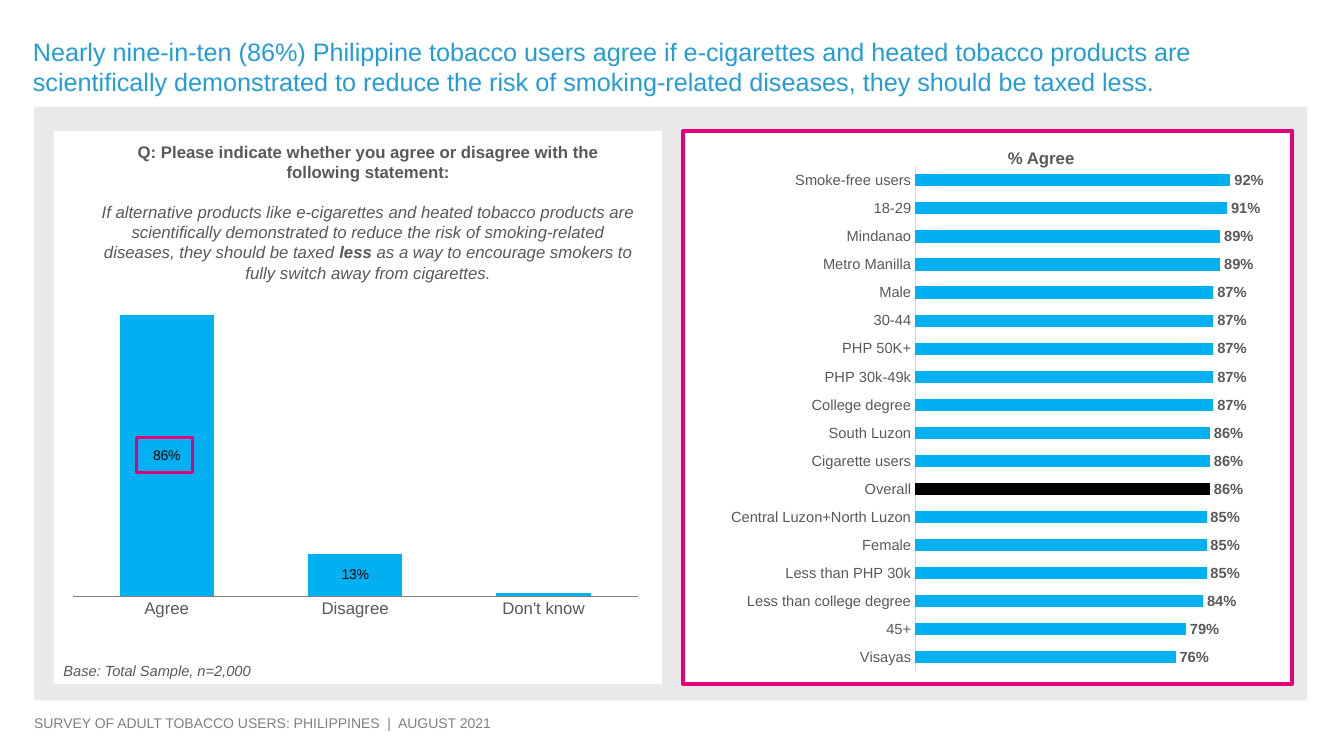
from lxml import etree
from pptx import Presentation
from pptx.chart.data import CategoryChartData
from pptx.dml.color import RGBColor
from pptx.enum.chart import XL_CHART_TYPE, XL_LABEL_POSITION, XL_TICK_LABEL_POSITION, XL_TICK_MARK
from pptx.enum.shapes import MSO_SHAPE
from pptx.enum.text import PP_ALIGN
from pptx.oxml.ns import qn
from pptx.util import Cm, Pt

RECTANGLE = MSO_SHAPE.RECTANGLE
COLUMN, BAR = XL_CHART_TYPE.COLUMN_CLUSTERED, XL_CHART_TYPE.BAR_CLUSTERED
LABEL_CENTER, LABEL_END = XL_LABEL_POSITION.CENTER, XL_LABEL_POSITION.OUTSIDE_END
NO_TICK, NO_LABELS = XL_TICK_MARK.NONE, XL_TICK_LABEL_POSITION.NONE
LEFT, CENTER = PP_ALIGN.LEFT, PP_ALIGN.CENTER

WHITE = RGBColor(0xFF, 0xFF, 0xFF)
BLACK = RGBColor(0x00, 0x00, 0x00)
PALE_GRAY = RGBColor(0xE9, 0xE9, 0xE9)
LINE_GRAY = RGBColor(0xD9, 0xD9, 0xD9)
MID_GRAY = RGBColor(0x80, 0x80, 0x80)
TEXT_GRAY = RGBColor(0x59, 0x59, 0x59)
TITLE_BLUE = RGBColor(0x24, 0x9C, 0xD8)
BAR_BLUE = RGBColor(0x00, 0xB0, 0xF0)
PINK = RGBColor(0xE4, 0x00, 0x79)
FONT = "Arial"

deck = Presentation()
deck.slide_width, deck.slide_height = Cm(33.87), Cm(19.05)
page = deck.slides.add_slide(deck.slide_layouts[6])


def add_text(text, left, top, width, height, size=12, color=TEXT_GRAY,
             bold=False, italic=False, align=LEFT):
    box = page.shapes.add_textbox(Cm(left), Cm(top), Cm(width), Cm(height))
    box.text_frame.word_wrap = True
    para = box.text_frame.paragraphs[0]
    para.alignment = align
    span = para.add_run()
    span.text = text
    span.font.name, span.font.size = FONT, Pt(size)
    span.font.bold, span.font.italic = bold, italic
    span.font.color.rgb = color
    return box


def add_bars(kind, values, left, top, width, height, plot, gap, size, axis_color):
    data = CategoryChartData(number_format="0%")
    data.categories = values.keys()
    data.add_series("Series 1", values.values())
    chart = page.shapes.add_chart(kind, Cm(left), Cm(top), Cm(width), Cm(height), data).chart
    chart.has_legend = chart.has_title = False
    chart.font.name, chart.font.size = FONT, Pt(size)
    chart.font.color.rgb = TEXT_GRAY
    chart.category_axis.major_tick_mark = NO_TICK
    chart.category_axis.format.line.color.rgb = axis_color
    chart.category_axis.format.line.width = Pt(0.75)
    axis = chart.value_axis
    axis.minimum_scale, axis.maximum_scale = 0, 1
    axis.has_major_gridlines = False
    axis.major_tick_mark = NO_TICK
    axis.tick_label_position = NO_LABELS
    axis.format.line.fill.background()

    bars = chart.plots[0]
    bars.gap_width, bars.vary_by_categories = gap, False
    bars.series[0].format.fill.solid()
    bars.series[0].format.fill.fore_color.rgb = BAR_BLUE
    bars.has_data_labels = True
    labels = bars.data_labels
    labels.show_value, labels.position = True, LABEL_END
    labels.number_format, labels.number_format_is_linked = "0%", False
    labels.font.name, labels.font.size, labels.font.bold = FONT, Pt(size), True
    labels.font.color.rgb = TEXT_GRAY

    area = chart._chartSpace.chart.plotArea
    for old in area.findall(qn("c:layout")):
        area.remove(old)
    layout = etree.Element(qn("c:layout"))
    area.insert(0, layout)
    manual = etree.SubElement(layout, qn("c:manualLayout"))
    settings = [("layoutTarget", "inner"), ("xMode", "edge"), ("yMode", "edge")]
    for name, value in settings + list(zip("xywh", plot)):
        etree.SubElement(manual, qn("c:" + name)).set("val", str(value))
    return bars.series[0]


panels = [
    (0.86, 2.69, 32.08, 14.96, PALE_GRAY, None, 0),
    (1.35, 3.3, 15.34, 13.94, WHITE, None, 0),
    (17.22, 3.3, 15.34, 13.94, WHITE, PINK, 3),
    (3.45, 11.02, 1.4, 0.89, None, PINK, 2.25),
]
answers = {"Agree": 0.86, "Disagree": 0.13, "Don't know": 0.01}
groups = {
    "Visayas": 0.76, "45+": 0.79, "Less than college degree": 0.84,
    "Less than PHP 30k": 0.85, "Female": 0.85, "Central Luzon+North Luzon": 0.85,
    "Overall": 0.86, "Cigarette users": 0.86, "South Luzon": 0.86,
    "College degree": 0.87, "PHP 30k-49k": 0.87, "PHP 50K+": 0.87,
    "30-44": 0.87, "Male": 0.87, "Metro Manilla": 0.89, "Mindanao": 0.89,
    "18-29": 0.91, "Smoke-free users": 0.92,
}

for left, top, width, height, fill, line, weight in panels:
    if fill is None:
        answer_series = add_bars(COLUMN, answers, 1.37, 3.3, 15.27, 12.73,
                                 (0.03, 0.275, 0.933, 0.646), 100, 12, MID_GRAY)
    panel = page.shapes.add_shape(RECTANGLE, Cm(left), Cm(top), Cm(width), Cm(height))
    panel.shadow.inherit = False
    if fill is None:
        panel.fill.background()
    else:
        panel.fill.solid()
        panel.fill.fore_color.rgb = fill
    if line is None:
        panel.line.fill.background()
    else:
        panel.line.color.rgb, panel.line.width = line, Pt(weight)

for index in range(2):
    label = answer_series.points[index].data_label
    label.font.name, label.font.size, label.font.bold = FONT, Pt(10), False
    label.font.color.rgb = BLACK
    label.position = LABEL_CENTER

group_series = add_bars(BAR, groups, 17.3, 3.3, 15.29, 13.94,
                        (0.377, 0.064, 0.565, 0.913), 130, 10.5, LINE_GRAY)
overall = group_series.points[list(groups).index("Overall")]
overall.format.fill.solid()
overall.format.fill.fore_color.rgb = BLACK

add_text("Nearly nine-in-ten (86%) Philippine tobacco users agree if e-cigarettes and heated "
         "tobacco products are scientifically demonstrated to reduce the risk of "
         "smoking-related diseases, they should be taxed less.",
         0.58, 0.79, 32.79, 1.8, size=18, color=TITLE_BLUE)
add_text("% Agree", 25.15, 3.61, 2.67, 0.76, bold=True)
add_text("Base: Total Sample, n=2,000", 1.35, 16.56, 11.81, 0.74, size=10.5, italic=True)
add_text("SURVEY OF ADULT TOBACCO USERS: PHILIPPINES  |  AUGUST 2021",
         0.61, 17.88, 31.57, 0.69, size=10, color=MID_GRAY)

question = add_text("Q: Please indicate whether you agree or disagree with the following statement:",
                    2.31, 3.45, 13.94, 3.84, bold=True, align=CENTER)
para = question.text_frame.add_paragraph()
para.alignment, para.space_before = CENTER, Pt(14)
statement = [
    ("If alternative products like e-cigarettes and heated tobacco products are scientifically "
     "demonstrated to reduce the risk of smoking-related diseases, they should be taxed ", False),
    ("less", True),
    (" as a way to encourage smokers to fully switch away from cigarettes.", False),
]
for text, bold in statement:
    span = para.add_run()
    span.text = text
    span.font.name, span.font.size = FONT, Pt(12)
    span.font.bold, span.font.italic = bold, True
    span.font.color.rgb = TEXT_GRAY

deck.save("out.pptx")
